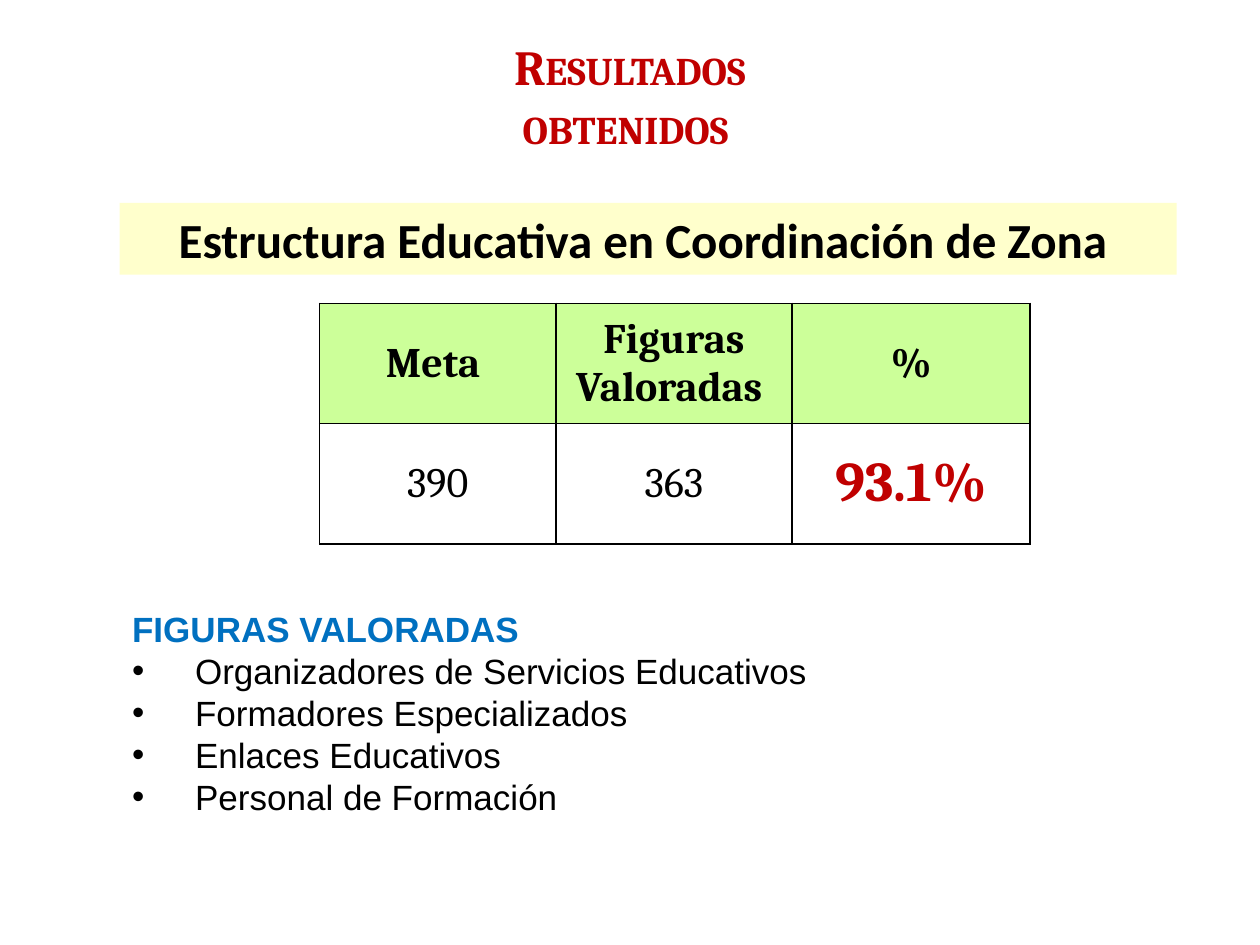
from dataclasses import dataclass

from lxml.etree import SubElement
from pptx import Presentation
from pptx.dml.color import RGBColor
from pptx.enum.shapes import MSO_SHAPE
from pptx.enum.text import MSO_ANCHOR, PP_ALIGN
from pptx.oxml.ns import qn
from pptx.util import Pt


@dataclass(frozen=True)
class Theme:
    black: str = "000000"
    red: str = "C00000"
    blue: str = "0070C0"
    cream: str = "FFFFCC"
    green: str = "CCFF99"
    serif: str = "Cambria"
    sans: str = "Calibri"
    body: str = "Arial"
    heading_size: int = 28
    table_size: int = 24
    highlight_size: int = 32
    list_size: int = 20


THEME = Theme()


def write(para, text, color, align=PP_ALIGN.LEFT, **font_format):
    """Add one formatted run to a paragraph."""
    para.alignment = align
    span = para.add_run()
    span.text = text
    for name, value in font_format.items():
        setattr(span.font, name, value)
    span.font.color.rgb = RGBColor.from_string(color)
    return span


def place(shape, box):
    for name, value in zip(("left", "top", "width", "height"), box):
        setattr(shape, name, Pt(value))


def add_title(page, box):
    title = page.shapes.title
    place(title, box)
    frame = title.text_frame
    frame.word_wrap = True
    frame.vertical_anchor = MSO_ANCHOR.MIDDLE
    span = write(frame.paragraphs[0], "Resultados obtenidos ", THEME.red, PP_ALIGN.CENTER,
                 name=THEME.serif, size=Pt(THEME.heading_size), bold=True)
    span.font._element.set("cap", "small")


def add_border(cell):
    """Draw a thin black line on all four sides of a cell."""
    properties = cell._tc.get_or_add_tcPr()
    for position, side in enumerate(("lnL", "lnR", "lnT", "lnB")):
        line = SubElement(properties, qn(f"a:{side}"), w=str(Pt(1)))
        fill = SubElement(line, qn("a:solidFill"))
        SubElement(fill, qn("a:srgbClr"), val=THEME.black)
        properties.insert(position, line)


def add_results(page, box):
    rows = [("Meta ", "Figuras Valoradas ", "%"), ("390", "363", "93.1%")]
    widths = (135, 135, 136)
    table = page.shapes.add_table(len(rows), len(widths), *map(Pt, box)).table
    for column, width in zip(table.columns, widths):
        column.width = Pt(width)
    for row_index, values in enumerate(rows):
        table.rows[row_index].height = Pt(box[3] / len(rows))
        for column_index, value in enumerate(values):
            cell = table.cell(row_index, column_index)
            header = row_index == 0
            highlight = value == rows[-1][-1]
            cell.vertical_anchor = MSO_ANCHOR.MIDDLE
            if header:
                cell.fill.solid()
                cell.fill.fore_color.rgb = RGBColor.from_string(THEME.green)
            else:
                cell.fill.background()
            add_border(cell)
            write(cell.text_frame.paragraphs[0], value,
                  THEME.red if highlight else THEME.black, PP_ALIGN.CENTER,
                  name=THEME.serif, bold=header or highlight,
                  size=Pt(THEME.highlight_size if highlight else THEME.table_size))


def add_banner(page, box):
    banner = page.shapes.add_shape(MSO_SHAPE.RECTANGLE, *map(Pt, box))
    banner.shadow.inherit = False
    banner.fill.solid()
    banner.fill.fore_color.rgb = RGBColor.from_string(THEME.cream)
    banner.line.fill.background()
    frame = banner.text_frame
    frame.word_wrap = True
    frame.vertical_anchor = MSO_ANCHOR.TOP
    write(frame.paragraphs[0], "Estructura Educativa en Coordinación de Zona ",
          THEME.black, PP_ALIGN.CENTER,
          name=THEME.sans, size=Pt(THEME.heading_size), bold=True)


def add_bullet(para, indent):
    properties = para._p.get_or_add_pPr()
    properties.set("marL", str(Pt(indent)))
    properties.set("indent", str(-Pt(indent)))
    SubElement(properties, qn("a:buFont"), typeface=THEME.body)
    SubElement(properties, qn("a:buChar"), char="•")


def add_roles(page, box):
    frame = page.shapes.add_textbox(*map(Pt, box)).text_frame
    frame.word_wrap = True
    font = {"name": THEME.body, "size": Pt(THEME.list_size)}
    write(frame.paragraphs[0], "FIGURAS VALORADAS", THEME.blue, bold=True, **font)
    for role in ("Organizadores de Servicios Educativos", "Formadores Especializados",
                 "Enlaces Educativos", "Personal de Formación"):
        para = frame.add_paragraph()
        add_bullet(para, 36)
        write(para, role, THEME.black, bold=False, **font)


def main():
    deck = Presentation()
    deck.slide_width, deck.slide_height = Pt(720), Pt(540)
    page = deck.slides.add_slide(deck.slide_layouts.get_by_name("Title Only"))
    # Regions, each as left, top, width, height
    add_title(page, (237, 9.4, 246, 90))
    add_results(page, (182.6, 173.4, 406, 137.4))
    add_banner(page, (68.4, 116, 604, 41))
    add_roles(page, (68.4, 343.6, 544, 128))
    deck.save("out.pptx")


if __name__ == "__main__":
    main()
